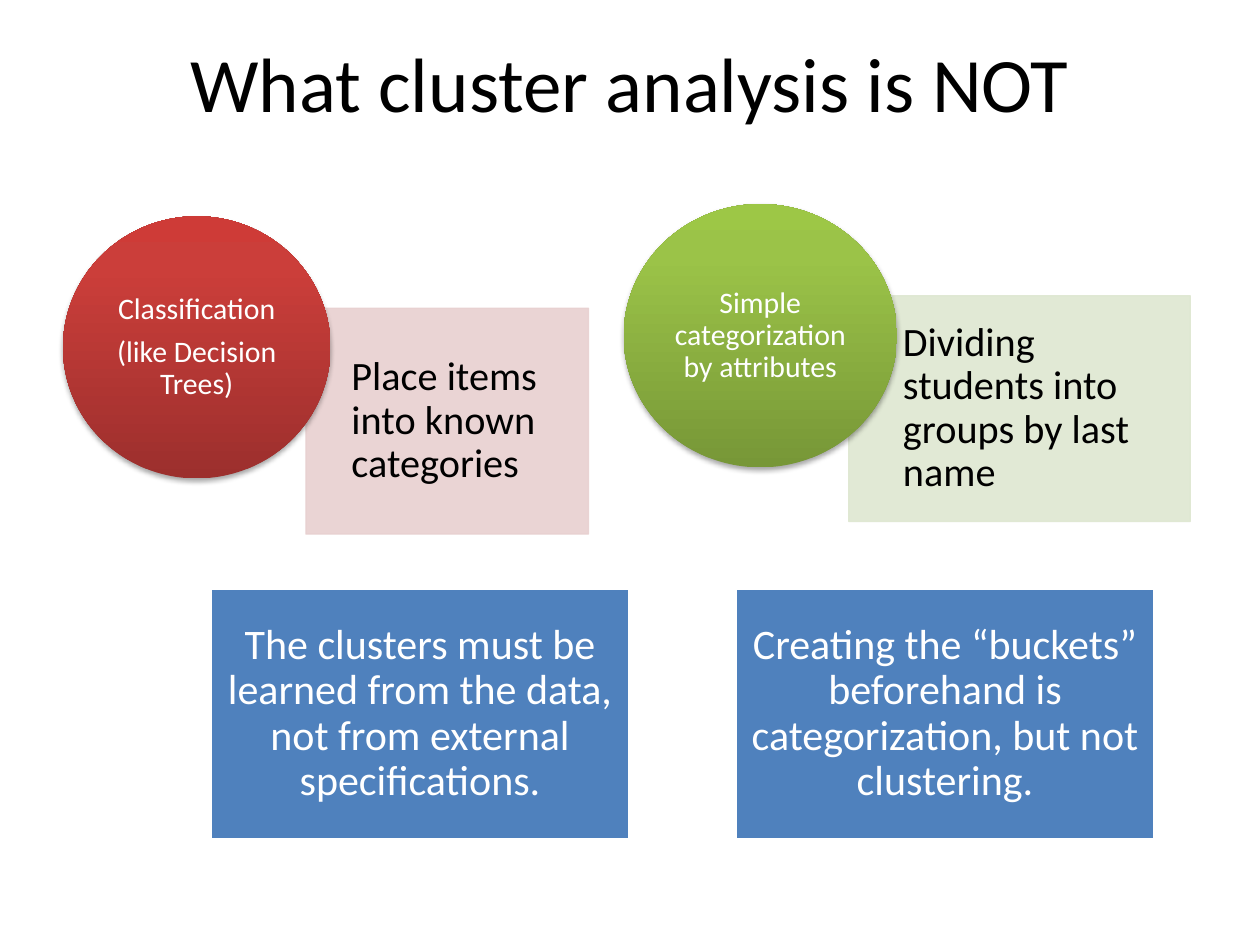
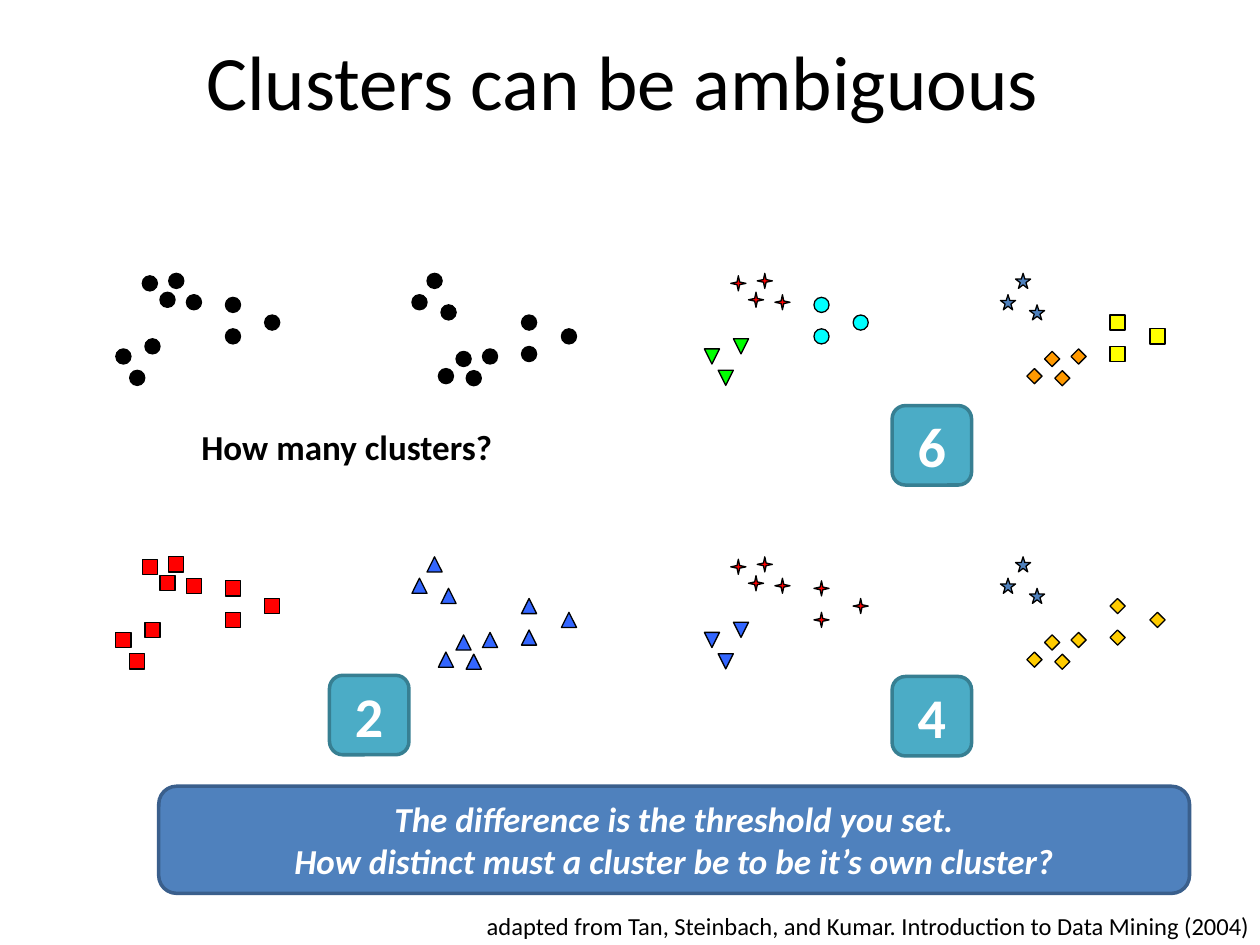
from dataclasses import dataclass
from typing import Optional

from pptx import Presentation
from pptx.dml.color import RGBColor
from pptx.enum.shapes import MSO_SHAPE
from pptx.enum.text import MSO_ANCHOR, PP_ALIGN
from pptx.oxml import parse_xml
from pptx.oxml.ns import nsdecls, qn
from pptx.util import Pt

FONT = "Calibri"
COLORS = {
    "white": "FFFFFF", "black": "000000", "blue": "4F81BD", "navy": "3A5F8C",
    "teal": "4BACC6", "dark teal": "377F92", "pink": "E8D0D0", "sage": "DEE7D1",
    "red": "FF0000", "royal": "3366FF", "gold": "FFCC00", "orange": "FF9900",
    "yellow": "FFFF00", "lime": "00FF00", "cyan": "00FFFF",
}
RED_GRADIENT = {0: "9C2F2D", 80: "CB3E3A", 100: "CE3B37"}
GREEN_GRADIENT = {0: "779737", 80: "9BC348", 100: "9DC746"}


@dataclass(frozen=True)
class Box:
    left: float
    top: float
    width: float
    height: float

    def lengths(self) -> tuple:
        return Pt(self.left), Pt(self.top), Pt(self.width), Pt(self.height)


@dataclass(frozen=True)
class TextStyle:
    size: float
    color: str = "white"
    align: PP_ALIGN = PP_ALIGN.CENTER
    anchor: MSO_ANCHOR = MSO_ANCHOR.MIDDLE
    bold: bool = False
    italic: bool = False
    spacing: Optional[float] = None
    after: float = 0
    insets: tuple = (7.2, 3.6, 7.2, 3.6)


@dataclass(frozen=True)
class Concept:
    circle: Box
    gradient: dict
    name: str
    panel: Box
    color: str
    example: str
    example_inset: float


@dataclass(frozen=True)
class Marker:
    kind: MSO_SHAPE
    color: str


@dataclass(frozen=True)
class Scatter:
    left: float
    top: float
    markers: tuple


@dataclass(frozen=True)
class Badge:
    left: float
    top: float
    count: str


TITLE = TextStyle(44, "black")
CIRCLE = TextStyle(17, spacing=0.9, after=6, insets=(0, 0, 0, 0))
REMARK = TextStyle(24, spacing=0.9, insets=(7.2,) * 4)
BADGE = TextStyle(32, bold=True)
BANNER = TextStyle(20, bold=True, italic=True)
QUESTION = TextStyle(20, "black", PP_ALIGN.LEFT, MSO_ANCHOR.TOP, bold=True)
CREDIT = TextStyle(14, "black", PP_ALIGN.RIGHT, MSO_ANCHOR.BOTTOM)

CONCEPTS = (
    Concept(Box(36, 123.6, 152.9, 149.8), RED_GRADIENT,
            "Classification\n(like Decision Trees)",
            Box(174.8, 176.2, 161.5, 129), "pink",
            "Place items into known categories", 26),
    Concept(Box(356.4, 116.6, 156.2, 150.5), GREEN_GRADIENT,
            "Simple categorization by attributes",
            Box(485, 169, 195.2, 129), "sage",
            "Dividing students into groups by last name", 31),
)
REMARKS = (
    "The clusters must be learned from the data, not from external specifications.",
    "Creating the “buckets” beforehand is categorization, but not clustering.",
)

MARKER_SIZE = 8.64
GROUPS = (
    ((40.3, 12.2), (15.1, 1.4), (30.2, 0), (25.2, 10.8)),
    ((16.6, 37.4), (0, 43.2), (7.9, 55.4)),
    ((62.6, 13.7), (85, 23.8), (62.6, 31.7)),
    ((209.5, 43.2), (184.3, 54.4), (200.2, 55.6), (194.4, 44.6)),
    ((185.8, 18), (169.2, 12.2), (177.8, 0)),
    ((231.8, 41.8), (254.6, 31.7), (231.8, 23.8)),
)
FLIPPED_GROUPS = 3
LEFT_X, RIGHT_X, UPPER_Y, LOWER_Y = 66.2, 402.5, 156.2, 318.2
DOT = Marker(MSO_SHAPE.OVAL, "black")
SQUARE = Marker(MSO_SHAPE.RECTANGLE, "red")
TRIANGLE = Marker(MSO_SHAPE.ISOSCELES_TRIANGLE, "royal")
SPARK = Marker(MSO_SHAPE.STAR_4_POINT, "red")
STAR = Marker(MSO_SHAPE.STAR_5_POINT, "blue")
GOLD_DIAMOND = Marker(MSO_SHAPE.DIAMOND, "gold")
SCATTERS = (
    Scatter(LEFT_X, UPPER_Y, (DOT,) * 6),
    Scatter(RIGHT_X, LOWER_Y, (
        SPARK, Marker(MSO_SHAPE.FLOWCHART_EXTRACT, "royal"), SPARK,
        GOLD_DIAMOND, STAR, GOLD_DIAMOND)),
    Scatter(LEFT_X, LOWER_Y, (SQUARE,) * 3 + (TRIANGLE,) * 3),
    Scatter(RIGHT_X, UPPER_Y, (
        SPARK, Marker(MSO_SHAPE.ISOSCELES_TRIANGLE, "lime"),
        Marker(MSO_SHAPE.OVAL, "cyan"), Marker(MSO_SHAPE.DIAMOND, "orange"),
        STAR, Marker(MSO_SHAPE.RECTANGLE, "yellow"))),
)
BADGE_SIZE = 45.4
BADGES = (Badge(509.8, 231.8, "6"), Badge(188.3, 385.9, "2"), Badge(509.8, 386.6, "4"))


def rgb(color: str) -> RGBColor:
    return RGBColor.from_string(COLORS[color])


def write(sp, text: str, style: TextStyle) -> None:
    tf = sp.text_frame
    tf.text = text
    tf.word_wrap = True
    tf.vertical_anchor = style.anchor
    tf.margin_left, tf.margin_top, tf.margin_right, tf.margin_bottom = map(Pt, style.insets)
    for p in tf.paragraphs:
        p.alignment = style.align
        p.line_spacing = style.spacing
        p.space_after = Pt(style.after)
        for r in p.runs:
            r.font.name = FONT
            r.font.size = Pt(style.size)
            r.font.bold = style.bold
            r.font.italic = style.italic
            r.font.color.rgb = rgb(style.color)


def add_text(s, box: Box, text: str, style: TextStyle) -> None:
    write(s.shapes.add_textbox(*box.lengths()), text, style)


def add_filled(s, kind: MSO_SHAPE, box: Box, fill: str, line: str, weight: float):
    sp = s.shapes.add_shape(kind, *box.lengths())
    sp.shadow.inherit = False
    sp.fill.solid()
    sp.fill.fore_color.rgb = rgb(fill)
    sp.line.color.rgb = rgb(line)
    sp.line.width = Pt(weight)
    return sp


def set_opacity(sp, percent: int) -> None:
    for color in sp.element.spPr.iter(qn("a:srgbClr")):
        color.append(parse_xml(f'<a:alpha {nsdecls("a")} val="{percent * 1000}"/>'))


def add_glossy_circle(s, box: Box, gradient: dict):
    sp = s.shapes.add_shape(MSO_SHAPE.OVAL, *box.lengths())
    sp.line.fill.background()
    sp.shadow.inherit = False
    stops = "".join(
        f'<a:gs pos="{pos * 1000}"><a:srgbClr val="{color}"/></a:gs>'
        for pos, color in gradient.items())
    spPr = sp.element.spPr
    spPr.find(qn("a:prstGeom")).addnext(parse_xml(
        f'<a:gradFill {nsdecls("a")} rotWithShape="1"><a:gsLst>{stops}</a:gsLst>'
        '<a:lin ang="16200000" scaled="0"/></a:gradFill>'))
    spPr.find(qn("a:effectLst")).append(parse_xml(
        f'<a:outerShdw {nsdecls("a")} blurRad="{Pt(3.1)}" dist="{Pt(1.8)}" dir="5400000" '
        'rotWithShape="0"><a:srgbClr val="000000"><a:alpha val="35000"/></a:srgbClr>'
        '</a:outerShdw>'))
    return sp


def add_concept(s, concept: Concept) -> None:
    panel = add_filled(s, MSO_SHAPE.RECTANGLE, concept.panel, concept.color, concept.color, 0.75)
    set_opacity(panel, 90)
    write(panel, concept.example, TextStyle(
        23, "black", PP_ALIGN.LEFT, spacing=0.9,
        insets=(concept.example_inset, 13, 13, 13)))
    write(add_glossy_circle(s, concept.circle, concept.gradient), concept.name, CIRCLE)


def add_scatter(s, scatter: Scatter) -> None:
    for i, (marker, points) in enumerate(zip(scatter.markers, GROUPS)):
        for x, y in points:
            box = Box(scatter.left + x, scatter.top + y, MARKER_SIZE, MARKER_SIZE)
            sp = add_filled(s, marker.kind, box, marker.color, "black", 0.75)
            if i < FLIPPED_GROUPS:
                sp.element.spPr.xfrm.set("flipV", "1")


def add_slide(prs, title: str, left: float, top: float):
    s = prs.slides.add_slide(prs.slide_layouts[6])
    add_text(s, Box(left, top, 648, 90), title, TITLE)
    return s


def build_not_clustering(prs) -> None:
    s = add_slide(prs, "What cluster analysis is NOT", 36, 1.4)
    for concept in CONCEPTS:
        add_concept(s, concept)
    for i, remark in enumerate(REMARKS):
        box = Box(120 + 300 * i, 336, 240, 144)
        write(add_filled(s, MSO_SHAPE.RECTANGLE, box, "blue", "white", 2), remark, REMARK)


def build_ambiguous(prs) -> None:
    s = add_slide(prs, "Clusters can be ambiguous", 31.7, 0.7)
    for scatter in SCATTERS:
        add_scatter(s, scatter)
    banner = add_filled(s, MSO_SHAPE.ROUNDED_RECTANGLE, Box(90.7, 449.3, 589, 61.2),
                        "blue", "navy", 2)
    write(banner, "The difference is the threshold you set.\n"
                  "How distinct must a cluster be to be it’s own cluster?", BANNER)
    add_text(s, Box(108, 239.8, 211, 31.7), "How many clusters?", QUESTION)
    for badge in BADGES:
        box = Box(badge.left, badge.top, BADGE_SIZE, BADGE_SIZE)
        sp = add_filled(s, MSO_SHAPE.ROUNDED_RECTANGLE, box, "teal", "dark teal", 2)
        write(sp, badge.count, BADGE)
    add_text(s, Box(84.2, 499.7, 637.2, 41),
             "adapted from Tan, Steinbach, and Kumar. Introduction to Data Mining (2004)", CREDIT)


def main() -> None:
    prs = Presentation()
    prs.slide_width, prs.slide_height = Pt(720), Pt(540)
    build_not_clustering(prs)
    build_ambiguous(prs)
    prs.save("out.pptx")


if __name__ == "__main__":
    main()
